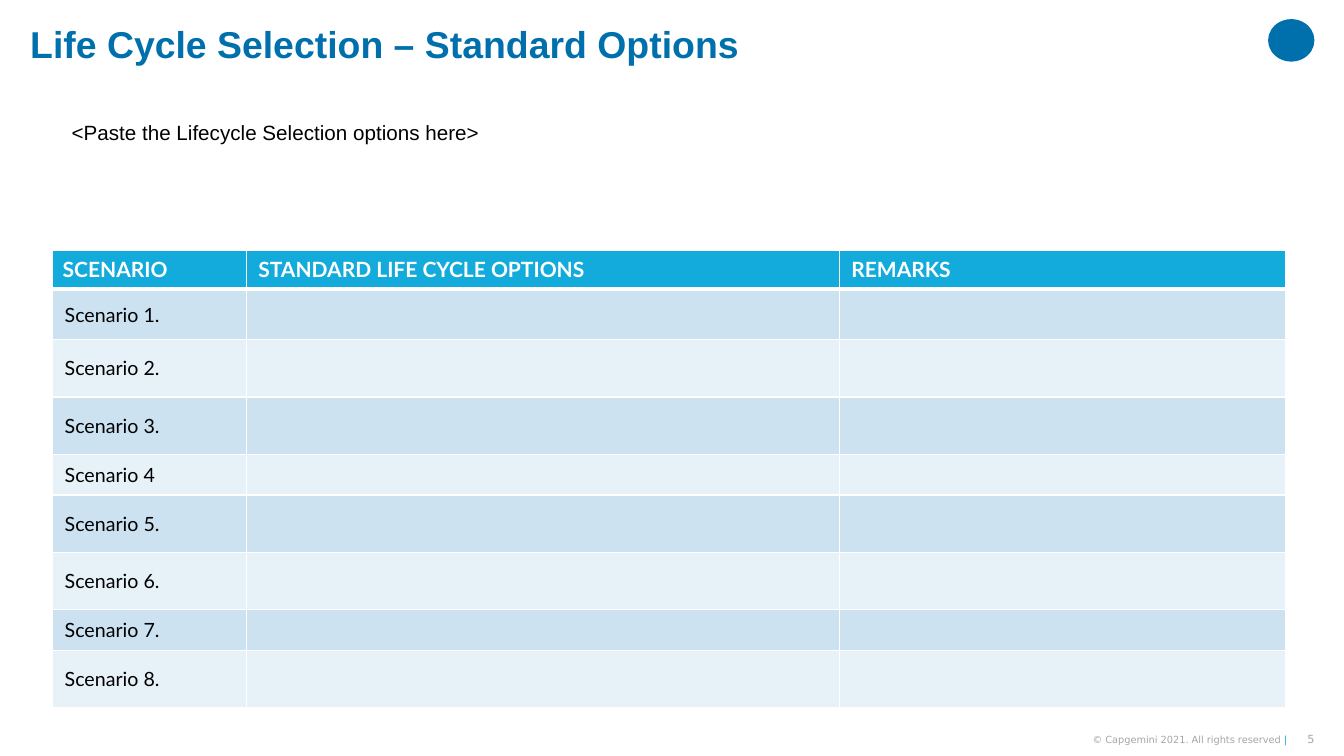
from lxml.etree import SubElement
from pptx import Presentation
from pptx.dml.color import RGBColor
from pptx.enum.shapes import MSO_SHAPE
from pptx.enum.text import MSO_ANCHOR as ANCHOR, MSO_AUTO_SIZE as AUTO, PP_ALIGN as ALIGN
from pptx.oxml.ns import qn
from pptx.util import Pt

BLUE, CYAN, GREY, WHITE, BLACK = "0070AD", "12ABDB", "A6A6A6", "FFFFFF", "000000"
BANDS = ("CCE2F1", "E7F1F8")
HEADERS = ("SCENARIO", "STANDARD LIFE CYCLE OPTIONS", "REMARKS")
SCENARIOS = [f"Scenario {n}" + ("" if n == 4 else ".") for n in range(1, 9)]
COLUMNS = (138.4, 423.6, 318.5)
TALL, SHORT = 41, 29
ROWS = (28, 36, TALL, TALL, SHORT, TALL, TALL, SHORT, TALL)


def rgb(value):
    return RGBColor.from_string(value)


class Deck:
    """Holds the style of the deck and the slide being built."""

    styles = {
        "title": dict(name="Arial", size=Pt(26.7), bold=True, color=BLUE),
        "body": dict(name="Arial", size=Pt(14.7), color=BLACK),
        "head": dict(name="Lato", size=Pt(15), bold=True, color=WHITE),
        "cell": dict(name="Lato", size=Pt(14), bold=False, color=BLACK),
        "number": dict(name="DejaVu Sans", size=Pt(8), color=GREY),
        "footer": dict(name="DejaVu Sans", size=Pt(7), color=GREY),
        "bar": dict(name="DejaVu Sans", size=Pt(7), color=CYAN),
    }

    def __init__(self):
        self.prs = Presentation()
        self.prs.slide_width, self.prs.slide_height = Pt(960), Pt(540)
        self.s = self.prs.slides.add_slide(self.prs.slide_layouts[5])

    def runs(self, p, *pairs):
        for text, style in pairs:
            r = p.add_run()
            r.text = text
            for key, value in self.styles[style].items():
                if key == "color":
                    r.font.color.rgb = rgb(value)
                else:
                    setattr(r.font, key, value)

    def title(self, box, text):
        sp = self.s.shapes.title
        sp.left, sp.top, sp.width, sp.height = map(Pt, box)
        tf = sp.text_frame
        tf.auto_size, tf.vertical_anchor = AUTO.NONE, ANCHOR.MIDDLE
        p = tf.paragraphs[0]
        p.alignment, p.line_spacing = ALIGN.LEFT, 0.9
        self.runs(p, (text, "title"))

    def text(self, box, *pairs, alignment=ALIGN.LEFT, **frame):
        tf = self.s.shapes.add_textbox(*map(Pt, box)).text_frame
        tf.word_wrap = True
        for key, value in frame.items():
            setattr(tf, key, value)
        p = tf.paragraphs[0]
        p.alignment = alignment
        self.runs(p, *pairs)

    def oval(self, box, color):
        sp = self.s.shapes.add_shape(MSO_SHAPE.OVAL, *map(Pt, box))
        sp.shadow.inherit = False
        sp.fill.solid()
        sp.fill.fore_color.rgb = rgb(color)
        sp.line.fill.background()

    def borders(self, cell, bottom):
        pr = cell._tc.get_or_add_tcPr()
        widths = {"lnL": 1, "lnR": 1, "lnT": 1, "lnB": bottom}
        for place, (side, width) in enumerate(widths.items()):
            ln = SubElement(pr, qn(f"a:{side}"), w=str(Pt(width)))
            fill = SubElement(ln, qn("a:solidFill"))
            SubElement(fill, qn("a:srgbClr"), val=WHITE)
            pr.insert(place, ln)

    def table(self, left, top, columns, heights, records):
        size = (len(heights), len(columns))
        box = (left, top, sum(columns), sum(heights))
        table = self.s.shapes.add_table(*size, *map(Pt, box)).table
        for column, width in zip(table.columns, columns):
            column.width = Pt(width)
        for i, (row, height, record) in enumerate(zip(table.rows, heights, records)):
            row.height = Pt(height)
            for j, (cell, text) in enumerate(zip(row.cells, record)):
                cell.vertical_anchor = ANCHOR.MIDDLE
                cell.margin_left = Pt(8.6 if i or j else 7.2)
                cell.margin_top = cell.margin_bottom = Pt(2)
                cell.fill.solid()
                cell.fill.fore_color.rgb = rgb(BANDS[(i - 1) % 2] if i else CYAN)
                self.borders(cell, 1 if i else 3)
                if text:
                    self.runs(cell.text_frame.paragraphs[0], (text, "cell" if i else "head"))


def main():
    deck = Deck()
    deck.title((14.4, 15.8, 885, 35.3), "Life Cycle Selection – Standard Options")
    deck.text((44, 82, 480, 25.2), ("<Paste the Lifecycle Selection options here>", "body"))
    records = [HEADERS] + [(name, "", "") for name in SCENARIOS]
    deck.table(37.6, 178.6, COLUMNS, ROWS, records)
    deck.oval((905.8, 13.7, 33.1, 30.3), BLUE)
    small = dict(margin_left=0, margin_top=0, margin_right=0, margin_bottom=0,
                 vertical_anchor=ANCHOR.MIDDLE, alignment=ALIGN.RIGHT)
    deck.text((710, 523.4, 209.4, 9.4),
              ("© Capgemini 2021. All rights reserved ", "footer"), ("|", "bar"), **small)
    deck.text((925.2, 523.4, 13.7, 9.4), ("5", "number"), **small)
    deck.prs.save("out.pptx")


if __name__ == "__main__":
    main()
